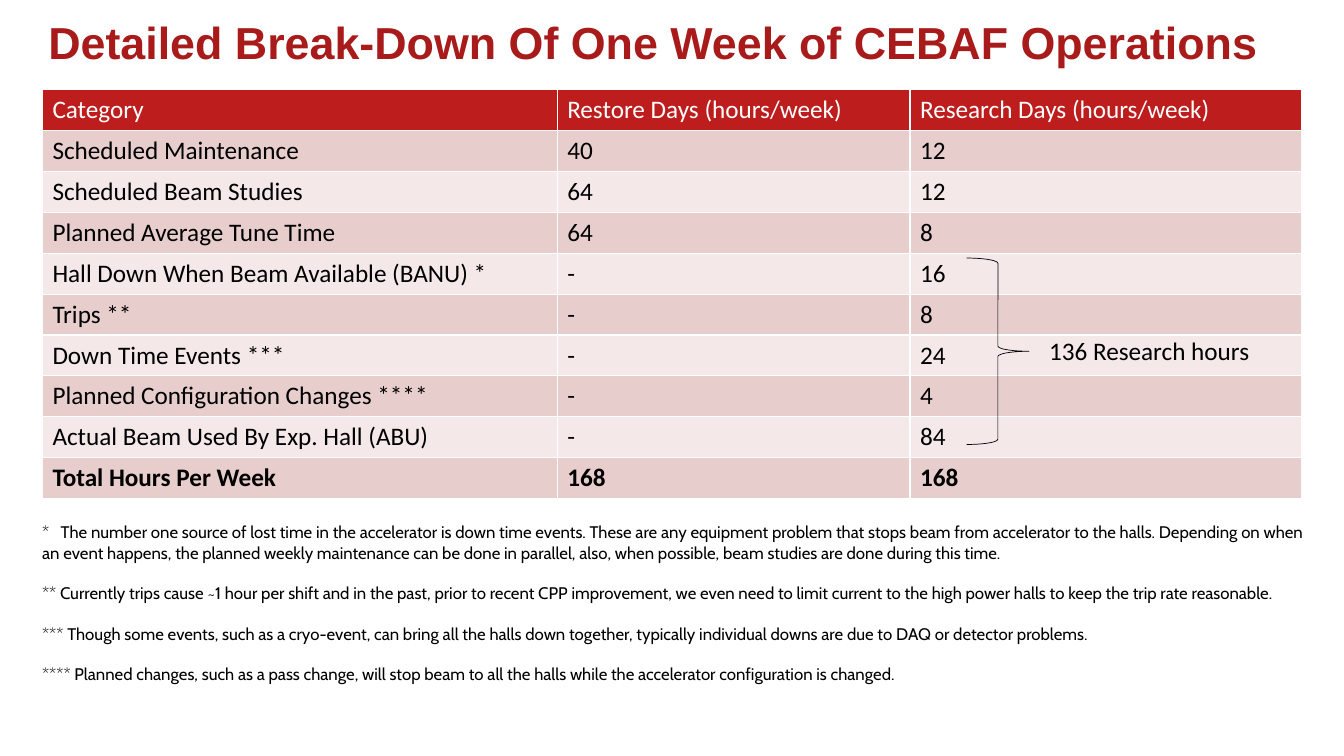
from lxml import etree
from pptx import Presentation
from pptx import util as u
from pptx.dml.color import RGBColor
from pptx.enum import shapes, text
from pptx.oxml import ns

COLORS = {"title": "A91B1B", "header": "BE1D1D", "odd": "E8CDCD",
          "even": "F4E8E8", "white": "FFFFFF", "black": "000000"}

ROWS = [
    ("Category", "Restore Days (hours/week)", "Research Days (hours/week)"),
    ("Scheduled Maintenance", "40", "12"),
    ("Scheduled Beam Studies", "64", "12"),
    ("Planned Average Tune Time", "64", "8"),
    ("Hall Down When Beam Available (BANU) *", "-", "16"),
    ("Trips **", "-", "8"),
    ("Down Time Events ***", "-", "24"),
    ("Planned Configuration Changes ****", "-", "4"),
    ("Actual Beam Used By Exp. Hall (ABU)", "-", "84"),
    ("Total Hours Per Week", "168", "168"),
]

FOOTNOTES = [
    "*\tThe number one source of lost time in the accelerator is down time events. "
    "These are any equipment problem that stops beam from accelerator to the halls. "
    "Depending on when an event happens, the planned weekly maintenance can be done "
    "in parallel, also, when possible, beam studies are done during this time.",
    "** Currently trips cause ~1 hour per shift and in the past, prior to recent CPP "
    "improvement, we even need to limit current to the high power halls to keep the "
    "trip rate reasonable.",
    "*** Though some events, such as a cryo-event, can bring all the halls down "
    "together, typically individual downs are due to DAQ or detector problems.",
    "**** Planned changes, such as a pass change, will stop beam to all the halls "
    "while the accelerator configuration is changed.",
]


def rgb(name):
    return RGBColor.from_string(COLORS[name])


def write(p, words, font="Calibri", size=18, color="black", bold=False):
    r = p.add_run()
    r.text = words
    r.font.name, r.font.size, r.font.bold = font, u.Pt(size), bold
    r.font.color.rgb = rgb(color)


class Deck:
    """Holds the slide style and draws each kind of element on the slide."""

    def __init__(self, prs):
        self.s = prs.slides.add_slide(prs.slide_layouts[6])

    def textbox(self, box, paragraphs, gap=0, spacing=None, tab=None,
                anchor=text.MSO_ANCHOR.TOP, **style):
        tf = self.s.shapes.add_textbox(*map(u.Pt, box)).text_frame
        tf.word_wrap, tf.vertical_anchor = True, anchor
        for i, words in enumerate(paragraphs):
            p = tf.add_paragraph() if i else tf.paragraphs[0]
            p.space_before = u.Pt(gap if i else 0)
            p.line_spacing = spacing
            if tab and "\t" in words:
                tabs = etree.SubElement(p._p.get_or_add_pPr(), ns.qn("a:tabLst"))
                etree.SubElement(tabs, ns.qn("a:tab"), pos=str(u.Pt(tab)), algn="l")
            write(p, words, **style)

    def border(self, cell, color="white", width=1):
        tcPr = cell._tc.get_or_add_tcPr()
        for side in ("lnL", "lnR", "lnT", "lnB"):
            ln = etree.SubElement(tcPr, ns.qn(f"a:{side}"), w=str(u.Pt(width)))
            fill = etree.SubElement(ln, ns.qn("a:solidFill"))
            etree.SubElement(fill, ns.qn("a:srgbClr"), val=COLORS[color])

    def table(self, left, top, widths, row_height, rows):
        box = (left, top, sum(widths), row_height * len(rows))
        table = self.s.shapes.add_table(len(rows), len(widths), *map(u.Pt, box)).table
        for column, width in zip(table.columns, widths):
            column.width = u.Pt(width)
        for i, row in enumerate(rows):
            table.rows[i].height = u.Pt(row_height)
            shade = "header" if i == 0 else "odd" if i % 2 else "even"
            for j, words in enumerate(row):
                cell = table.cell(i, j)
                self.border(cell)
                cell.fill.solid()
                cell.fill.fore_color.rgb = rgb(shade)
                write(cell.text_frame.paragraphs[0], words,
                      color="black" if i else "white", bold=i == len(rows) - 1)

    def brace(self, box, color="black", width=0.5):
        sp = self.s.shapes.add_shape(shapes.MSO_SHAPE.RIGHT_BRACE, *map(u.Pt, box))
        sp.shadow.inherit = False
        sp.fill.background()
        sp.line.color.rgb = rgb(color)
        sp.line.width = u.Pt(width)


def main():
    prs = Presentation()
    prs.slide_width, prs.slide_height = u.Pt(960), u.Pt(540)
    deck = Deck(prs)
    deck.textbox((27.4, 13, 899.3, 38.2),
                 ["Detailed Break-Down Of One Week of CEBAF Operations"],
                 spacing=0.9, anchor=text.MSO_ANCHOR.MIDDLE,
                 font="Arial", size=32, color="title", bold=True)
    deck.table(30.3, 64.1, (367.7, 252, 280), 29.2, ROWS)
    deck.brace((690.5, 184.3, 44.6, 133.2))
    deck.textbox((742.3, 236.2, 180.7, 28.8), ["136 Research hours"])
    deck.textbox((23, 369.4, 924, 123.8), FOOTNOTES, gap=14.5, tab=13.3,
                 font="Cabin", size=12)
    prs.save("out.pptx")


if __name__ == "__main__":
    main()
